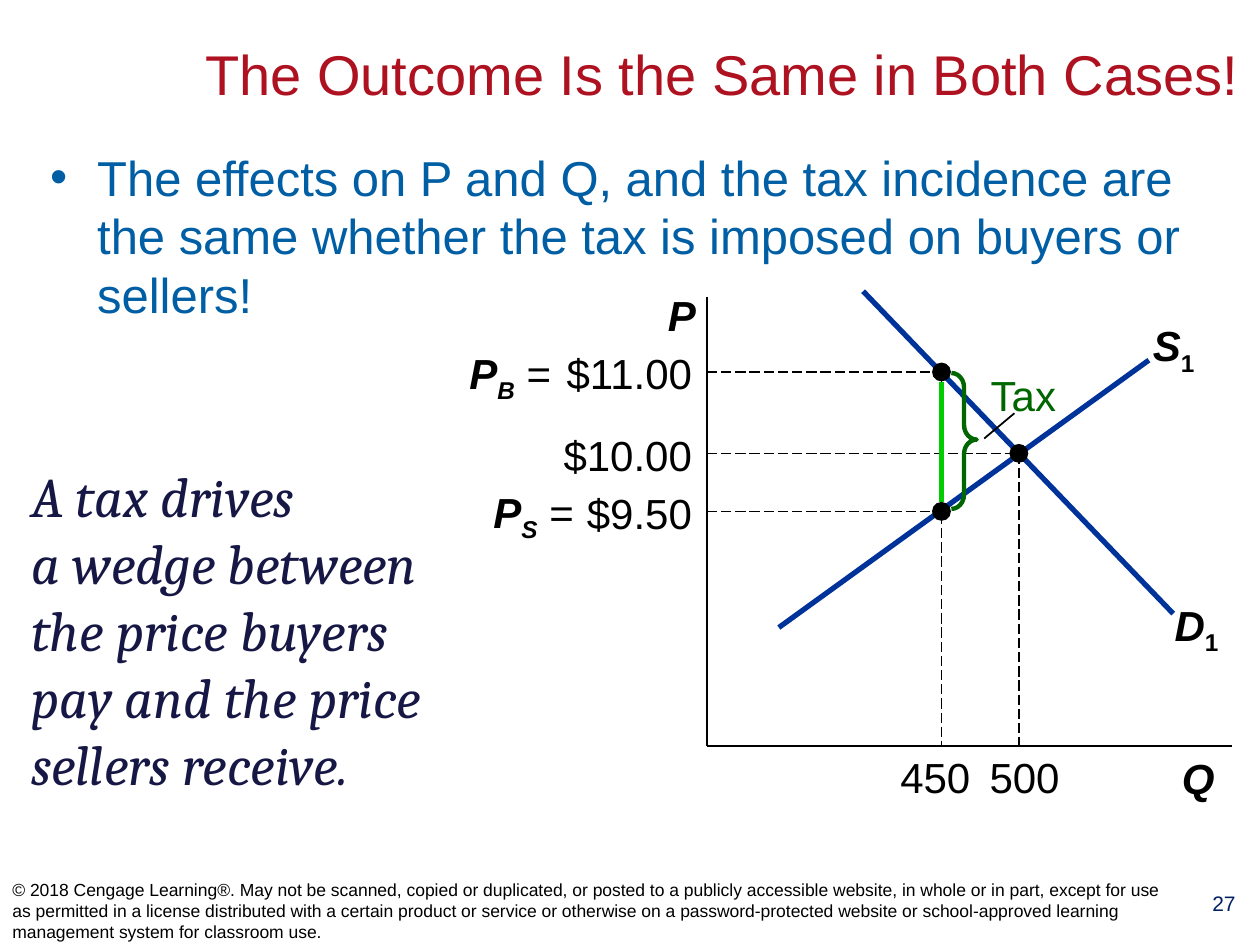
from lxml.etree import SubElement
from pptx import Presentation
from pptx.dml.color import RGBColor
from pptx.enum.dml import MSO_LINE
from pptx.enum.shapes import MSO_CONNECTOR, MSO_SHAPE
from pptx.enum.text import MSO_ANCHOR, PP_ALIGN
from pptx.oxml.ns import qn
from pptx.util import Cm, Pt

BLACK = "000000"
CURVE = "003399"
TAX_GREEN = "006600"

AXIS_X, AXIS_Y = 14.25, 15.04
TAXED_Q, UNTAXED_Q = 18.98, 20.54
BUYER_PRICE, MARKET_PRICE, SELLER_PRICE = 7.5, 9.14, 10.31
DOT = 0.38

SYMBOL = {"bold": True, "italic": True}
SUBSCRIPT = {"bold": True, "baseline": "-25000"}
ITALIC_SUBSCRIPT = {**SYMBOL, "baseline": "-25000"}
NO_SIDE_INSETS = {"margin_left": 0, "margin_right": 0, "margin_top": 0, "margin_bottom": 0}
PRICE_INSETS = {**NO_SIDE_INSETS, "margin_right": Cm(0.25)}


def color(hex_value):
    return RGBColor.from_string(hex_value)


def apply_values(target, values):
    for name, value in values.items():
        setattr(target, name, value)


def add_run(paragraph, text, ink, size, font="Arial", baseline=None, **style):
    run = paragraph.add_run()
    run.text = text
    apply_values(run.font, {"name": font, "size": Pt(size), **style})
    run.font.color.rgb = color(ink)
    if baseline:
        run.font._element.set("baseline", baseline)


def add_text(slide, position, runs, ink=BLACK, size=24, align=PP_ALIGN.LEFT, frame=None, **style):
    box = slide.shapes.add_textbox(*map(Cm, position))
    apply_values(box.text_frame, {"word_wrap": True, **(frame or {})})
    paragraph = box.text_frame.paragraphs[0]
    paragraph.alignment = align
    for text, run_style in runs:
        add_run(paragraph, text, ink, size, **{**style, **run_style})
    return paragraph


def add_bullet(paragraph, indent):
    properties = paragraph._p.get_or_add_pPr()
    properties.set("marL", str(Cm(indent)))
    properties.set("indent", str(-Cm(indent)))
    SubElement(properties, qn("a:buFont"), typeface="Arial")
    SubElement(properties, qn("a:buChar"), char="•")


def add_line(slide, start, end, ink=BLACK, width=1, dash=None):
    line = slide.shapes.add_connector(MSO_CONNECTOR.STRAIGHT, *map(Cm, (*start, *end)))
    line.line.color.rgb = color(ink)
    apply_values(line.line, {"width": Pt(width), "dash_style": dash})
    SubElement(line._element.spPr, qn("a:effectLst"))


def add_guide(slide, start, end):
    add_line(slide, start, end, width=0.75, dash=MSO_LINE.LONG_DASH)


def add_dot(slide, x, y):
    dot = slide.shapes.add_shape(
        MSO_SHAPE.OVAL, *map(Cm, (x - DOT / 2, y - DOT / 2, DOT, DOT))
    )
    dot.shadow.inherit = False
    dot.fill.solid()
    dot.fill.fore_color.rgb = color(BLACK)
    dot.line.fill.background()


def add_brace(slide, position):
    brace = slide.shapes.add_shape(MSO_SHAPE.RIGHT_BRACE, *map(Cm, position))
    brace.shadow.inherit = False
    brace.adjustments[0] = 0.57
    brace.adjustments[1] = 0.49
    brace.fill.background()
    brace.line.color.rgb = color(TAX_GREEN)
    brace.line.width = Pt(2.5)


def add_wording(slide):
    add_text(slide, (3.73, 0.28, 21.67, 2.39),
             [("The Outcome Is the Same in Both Cases!", {})], "AE1221", 32, PP_ALIGN.CENTER,
             {"word_wrap": False, "vertical_anchor": MSO_ANCHOR.MIDDLE})
    effects = add_text(slide, (0.76, 2.84, 23.75, 15.06), [
        ("The effects on P and Q, and the tax incidence are the same whether "
         "the tax is imposed on buyers or sellers!", {})], "005EA4", 28)
    add_bullet(effects, 0.95)
    wedge = add_text(slide, (0.38, 9.17, 9.19, 7.19), [("A tax drives", {})],
                     "171745", 32, font="Cambria", italic=True)
    wedge.add_line_break()
    add_run(wedge, "a wedge between the price buyers pay and the price sellers receive.",
            "171745", 32, "Cambria", italic=True)
    add_text(slide, (23.95, 17.83, 1.45, 1.04), [("27", {})], "002060", 12, PP_ALIGN.CENTER)
    add_text(slide, (0, 17.68, 23.9, 1.37), [
        ("© 2018 Cengage Learning®. May not be scanned, copied or duplicated, or posted to a "
         "publicly accessible website, in whole or in part, except for use as permitted in a "
         "license distributed with a certain product or service or otherwise on a "
         "password-protected website or school-approved learning management system for "
         "classroom use.", {})], size=10, frame={"vertical_anchor": MSO_ANCHOR.MIDDLE})


def add_curves(slide):
    add_line(slide, (15.7, 12.65), (23.16, 7.26), CURVE, 3)
    add_line(slide, (17.4, 5.87), (23.65, 12.37), CURVE, 3)
    add_line(slide, (AXIS_X, 5.99), (AXIS_X, AXIS_Y))
    add_line(slide, (AXIS_X, AXIS_Y), (24.84, AXIS_Y))


def add_equilibria(slide):
    points = [
        (TAXED_Q, BUYER_PRICE, "$11.00"),
        (UNTAXED_Q, MARKET_PRICE, "$10.00"),
        (TAXED_Q, SELLER_PRICE, "$9.50"),
    ]
    for quantity, price, label in points:
        add_guide(slide, (AXIS_X, price), (quantity, price))
        add_text(slide, (10.95, price - 0.49, 3.25, 1.02), [(label, {})],
                 align=PP_ALIGN.RIGHT, frame=PRICE_INSETS)
    quantities = [(TAXED_Q, BUYER_PRICE, 18.04, "450"), (UNTAXED_Q, MARKET_PRICE, 19.84, "500")]
    for quantity, price, left, label in quantities:
        add_guide(slide, (quantity, price), (quantity, AXIS_Y))
        add_text(slide, (left, 15.16, 1.63, 1.02), [(label, {})],
                 align=PP_ALIGN.CENTER, frame=NO_SIDE_INSETS)
    add_line(slide, (TAXED_Q, 10.11), (TAXED_Q, 7.7), "00CC00", 3)
    for quantity, price, _ in points:
        add_dot(slide, quantity, price)


def add_symbols(slide):
    for left, top, width, letter, index in [
        (22.81, 6.32, 1.7, "S", "1"),
        (23.27, 11.96, 1.7, "D", "1"),
        (13.16, 5.72, 1.17, "P", ""),
        (23.52, 15.04, 1.27, "Q", ""),
    ]:
        runs = [(letter, SYMBOL)] + ([(index, SUBSCRIPT)] if index else [])
        add_text(slide, (left, top, width, 1.27), runs, align=PP_ALIGN.CENTER)
    for left, top, payer in [(9.12, 6.88, "B"), (9.58, 9.68, "S")]:
        add_text(slide, (left, top, 2.24, 1.27),
                 [("P", SYMBOL), (payer, ITALIC_SUBSCRIPT), (" =", {})], align=PP_ALIGN.RIGHT)


def add_tax(slide):
    add_brace(slide, (19.18, 7.52, 0.51, 2.74))
    add_text(slide, (19.58, 7.32, 1.96, 1.27), [("Tax", {})], TAX_GREEN, align=PP_ALIGN.RIGHT)
    add_line(slide, (19.84, 8.84), (20.45, 8.33))


def main():
    deck = Presentation()
    deck.slide_width, deck.slide_height = Cm(25.4), Cm(19.05)
    slide = deck.slides.add_slide(deck.slide_layouts[6])
    add_wording(slide)
    add_curves(slide)
    add_equilibria(slide)
    add_symbols(slide)
    add_tax(slide)
    deck.save("out.pptx")


if __name__ == "__main__":
    main()
